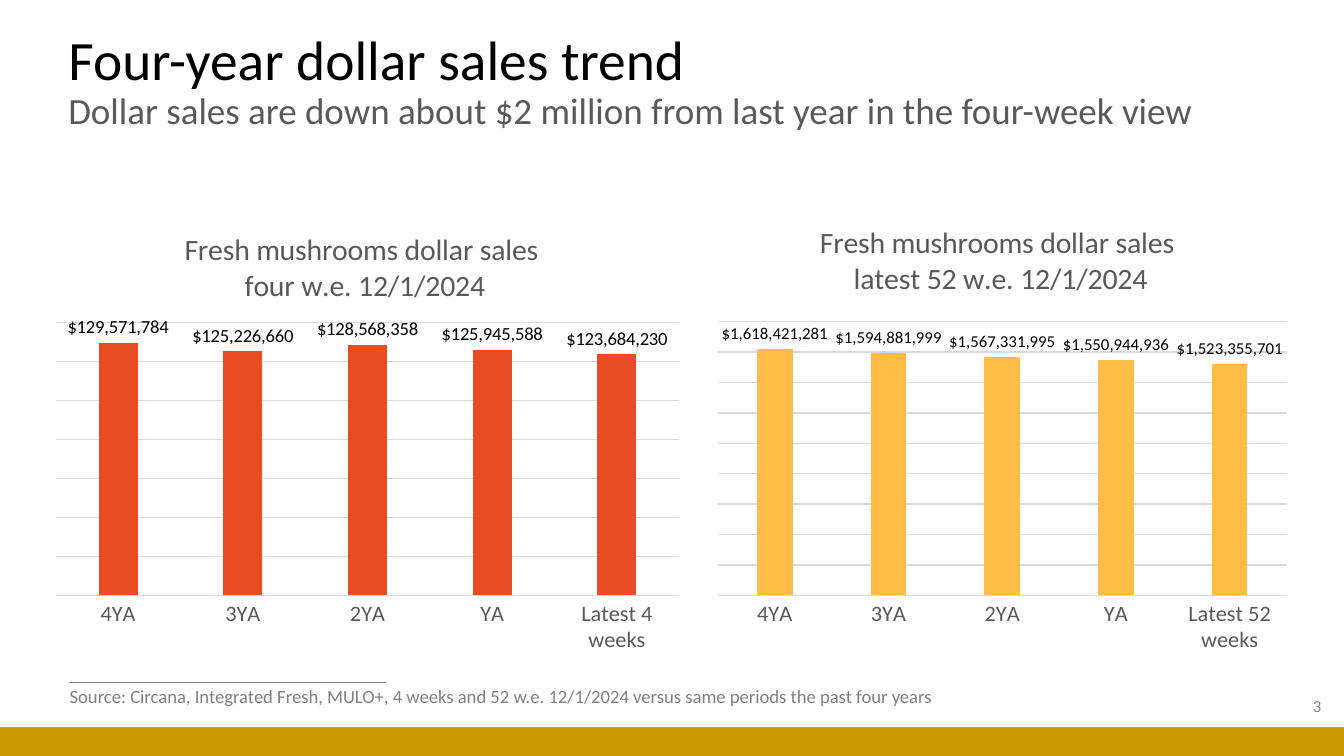
import pptx
import pptx.util
import pptx.chart.data
import pptx.dml.color
import pptx.enum.chart
import pptx.enum.shapes
import pptx.enum.text
import pptx.oxml
import pptx.oxml.ns

Inches, Pt = pptx.util.Inches, pptx.util.Pt
RGB = pptx.dml.color.RGBColor.from_string
Align = pptx.enum.text.PP_ALIGN
Anchor = pptx.enum.text.MSO_ANCHOR
qn = pptx.oxml.ns.qn

THEME = {
    "font": "Calibri",
    "colors": {"ink": "000000", "muted": "595959", "source": "808080", "number": "8C8C8C",
               "grid": "D9D9D9", "band": "CC9900", "four": "E84C22", "year": "FFBD47"},
    "sizes": {"headline": 29.7, "subhead": 19.8, "chart_title": 16, "axis": 12,
              "source": 10, "number": 9, "four": 10, "year": 9},
}
WIDTH = 10
HEIGHT = WIDTH * 9 / 16
BAND_TOP = 5.41
YEARS_AGO = ["4YA", "3YA", "2YA", "YA"]
DOLLARS = r"\$#,##0"

TEXTS = [
    {"box": (0.41, 0.22, 8.6, 0.79), "spacing": 0.9,
     "frame": {"word_wrap": True, "vertical_anchor": Anchor.MIDDLE},
     "align": Align.LEFT,
     "lines": [("Four-year dollar sales trend", "headline", "ink"),
               ("Dollar sales are down about $2 million from last year in the four-week view",
                "subhead", "muted")]},
    {"box": (7.68, 5.1, 2.25, 0.3), "spacing": 1,
     "frame": {"word_wrap": True, "vertical_anchor": Anchor.MIDDLE},
     "align": Align.RIGHT,
     "lines": [("3", "number", "number")]},
    {"box": (0.42, 5.05, 6.75, 0.27), "spacing": 1,
     "frame": {"word_wrap": False, "vertical_anchor": Anchor.TOP},
     "align": Align.LEFT,
     "lines": [("Source: Circana, Integrated Fresh, MULO+, 4 weeks and 52 w.e. 12/1/2024 "
                "versus same periods the past four years", "source", "source")]},
]
CHARTS = [
    {"period": "four", "latest": "Latest 4 weeks",
     "title": ["Fresh mushrooms dollar sales ", "four w.e. 12/1/2024"],
     "sales": [129571784, 125226660, 128568358, 125945588, 123684230],
     "scale": (140_000_000, 20_000_000),
     "box": (0.41, 1.55, 4.65, 3.31), "title_at": (0.2, 0.04),
     "plot": (0, 0.26, 1, 0.62)},
    {"period": "year", "latest": "Latest 52 weeks",
     "title": ["Fresh mushrooms dollar sales ", "latest 52 w.e. 12/1/2024"],
     "sales": [1618421281, 1594881999, 1567331995, 1550944936, 1523355701],
     "scale": (1_800_000_000, 200_000_000),
     "box": (5.16, 1.63, 4.55, 3.23), "title_at": (0.2, 0),
     "plot": (0.04, 0.24, 0.93, 0.64)},
]


def apply(target, values):
    for name, value in values.items():
        setattr(target, name, value)


def style(font, size, color):
    apply(font, {"name": THEME["font"], "size": Pt(THEME["sizes"][size]), "bold": False})
    font.color.rgb = RGB(THEME["colors"][color])


def rule(line, color, width):
    line.color.rgb = RGB(THEME["colors"][color])
    line.width = Pt(width)


def place(parent, index, shares, inner=False):
    for old in parent.findall(qn("c:layout")):
        parent.remove(old)
    target = '<c:layoutTarget val="inner"/>' if inner else ""
    modes = '<c:xMode val="edge"/><c:yMode val="edge"/>'
    sides = "".join(f'<c:{side} val="{share}"/>' for side, share in zip("xywh", shares))
    parent.insert(index, pptx.oxml.parse_xml(
        f'<c:layout {pptx.oxml.ns.nsdecls("c")}><c:manualLayout>{target}{modes}{sides}'
        "</c:manualLayout></c:layout>"))


def add_text(slide, content):
    frame = slide.shapes.add_textbox(*map(Inches, content["box"])).text_frame
    apply(frame, content["frame"])
    paragraph = frame.paragraphs[0]
    apply(paragraph, {"alignment": content["align"], "line_spacing": content["spacing"]})
    for number, (words, size, color) in enumerate(content["lines"]):
        if number:
            paragraph.add_line_break()
        run = paragraph.add_run()
        run.text = words
        style(run.font, size, color)


def add_sales_chart(slide, content):
    data = pptx.chart.data.CategoryChartData(number_format=DOLLARS)
    data.categories = YEARS_AGO + [content["latest"]]
    data.add_series("Series 1", content["sales"])
    chart = slide.shapes.add_chart(
        pptx.enum.chart.XL_CHART_TYPE.COLUMN_CLUSTERED,
        *map(Inches, content["box"]), data).chart
    chart.has_legend = False
    style(chart.font, "source", "ink")

    title = chart.chart_title.text_frame
    for number, words in enumerate(content["title"]):
        paragraph = title.add_paragraph() if number else title.paragraphs[0]
        run = paragraph.add_run()
        run.text = words
        style(run.font, "chart_title", "muted")
    place(chart.chart_title._element, 1, content["title_at"])
    place(chart._chartSpace.chart.plotArea, 0, content["plot"], inner=True)

    none = pptx.enum.chart.XL_TICK_MARK.NONE
    periods, dollars = chart.category_axis, chart.value_axis
    apply(periods, {"major_tick_mark": none, "minor_tick_mark": none})
    style(periods.tick_labels.font, "axis", "muted")
    rule(periods.format.line, "grid", 0.75)
    top, step = content["scale"]
    apply(dollars, {"visible": False, "minimum_scale": 0, "maximum_scale": top,
                    "major_unit": step, "has_major_gridlines": True})
    rule(dollars.major_gridlines.format.line, "grid", 0.75)

    columns = chart.plots[0]
    apply(columns, {"gap_width": 219, "overlap": -27, "vary_by_categories": False})
    sales = columns.series[0]
    sales.format.fill.solid()
    sales.format.fill.fore_color.rgb = RGB(THEME["colors"][content["period"]])
    labels = sales.data_labels
    apply(labels, {"show_value": True, "number_format": DOLLARS,
                   "number_format_is_linked": False,
                   "position": pptx.enum.chart.XL_LABEL_POSITION.OUTSIDE_END})
    style(labels.font, content["period"], "ink")


def main():
    deck = pptx.Presentation()
    apply(deck, {"slide_width": Inches(WIDTH), "slide_height": Inches(HEIGHT)})
    slide = deck.slides.add_slide(deck.slide_layouts[6])

    source_rule = slide.shapes.add_connector(
        pptx.enum.shapes.MSO_CONNECTOR.STRAIGHT, *map(Inches, (0.51, 5.08, 2.87, 5.08)))
    rule(source_rule.line, "source", 0.5)
    source_rule._element.spPr.append(
        pptx.oxml.parse_xml(f'<a:effectLst {pptx.oxml.ns.nsdecls("a")}/>'))

    band = slide.shapes.add_shape(
        pptx.enum.shapes.MSO_SHAPE.RECTANGLE,
        *map(Inches, (0, BAND_TOP, WIDTH, HEIGHT - BAND_TOP)))
    band.shadow.inherit = False
    band.fill.solid()
    band.fill.fore_color.rgb = RGB(THEME["colors"]["band"])
    band.line.fill.background()

    for content in TEXTS:
        add_text(slide, content)
    for content in CHARTS:
        add_sales_chart(slide, content)
    deck.save("out.pptx")


if __name__ == "__main__":
    main()
